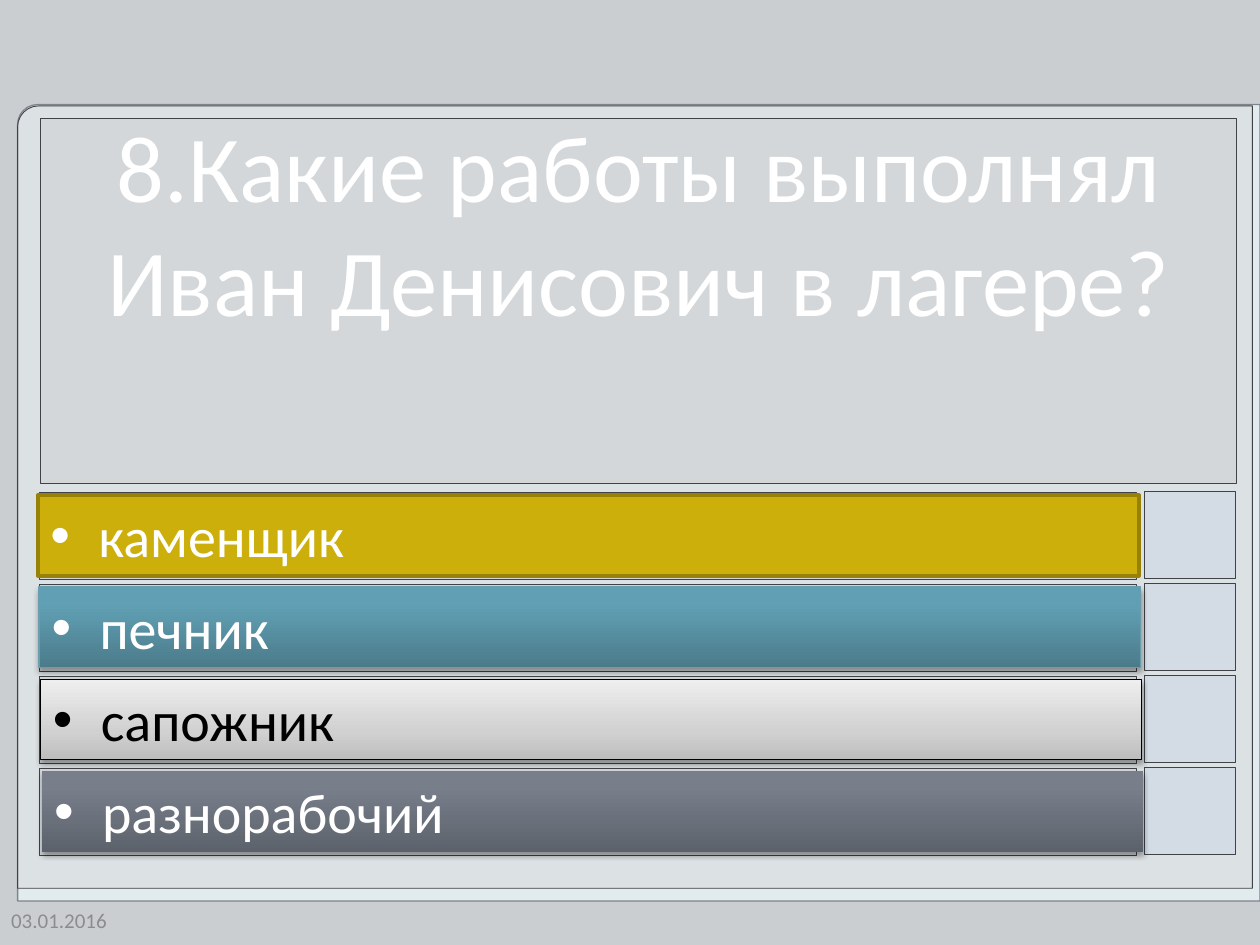
from lxml.etree import SubElement
from pptx import Presentation
from pptx.dml.color import RGBColor as Color
from pptx.enum.shapes import MSO_SHAPE as Form
from pptx.enum.text import MSO_ANCHOR as Anchor, MSO_AUTO_SIZE as Fit, PP_ALIGN as Align
from pptx.oxml.ns import qn
from pptx.util import Inches, Pt

COLORS = {
    "page": "CBCED1", "back": "E2ECEF", "back_edge": "7E848D",
    "card": "D8D8D8", "edge": "3F4247", "mark": "CCD8E7",
    "date": "8C8C8C", "white": "FFFFFF", "black": "000000",
    "gold": "CCAF0A", "gold_edge": "978107", "teal_edge": "6A9DAE",
}
TOP, STEP = 3.93, 0.73
ANSWERS = [
    ("каменщик", "white", "gold_edge", 2, []),
    ("печник", "white", "teal_edge", 0.75, [(0, "4B7B8B"), (80, "61A0B4"), (100, "60A2B7")]),
    ("сапожник", "black", "black", 0.75, [(0, "BDBDBD"), (35, "D1D1D1"), (100, "EEEEEE")]),
    ("разнорабочий", "white", None, 0, [(0, "5C626B"), (80, "787F8B"), (100, "78808C")]),
]


def add_panel(form, area, fill, edge="edge", width=0.5, alpha=50):
    panel = page.shapes.add_shape(form, *map(Inches, area))
    panel.shadow.inherit = False
    panel.fill.solid()
    panel.fill.fore_color.rgb = Color.from_string(COLORS[fill])
    panel.line.color.rgb = Color.from_string(COLORS[edge])
    panel.line.width = Pt(width)
    color = panel._element.spPr.find(qn("a:solidFill"))[0]
    SubElement(color, qn("a:alpha"), val=str(alpha * 1000))
    return panel


def write(box, area, text, size, color, align, anchor):
    for name, value in zip(("left", "top", "width", "height"), area):
        setattr(box, name, Inches(value))
    frame = box.text_frame
    frame.text = text
    for name, value in {"word_wrap": True, "auto_size": Fit.NONE, "vertical_anchor": anchor}.items():
        setattr(frame, name, value)
    para = frame.paragraphs[0]
    para.alignment = align
    font = para.runs[0].font
    for name, value in {"name": "Calibri", "size": Pt(size), "bold": False}.items():
        setattr(font, name, value)
    font.color.rgb = Color.from_string(COLORS[color])
    return para


deck = Presentation()
deck.slide_width, deck.slide_height = Inches(10), Inches(7.5)
page = deck.slides.add_slide(deck.slide_layouts[4])
page.background.fill.solid()
page.background.fill.fore_color.rgb = Color.from_string(COLORS["page"])
title, *bodies = list(page.placeholders)

back = add_panel(Form.SNIP_ROUND_RECTANGLE, (0.14, 0.83, 9.86, 6.32), "back", "back_edge", 0.75, 100)
back.adjustments[0], back.adjustments[1] = 0.025, 0
card = add_panel(Form.ROUND_1_RECTANGLE, (0.14, 0.84, 9.8, 6.21), "card")
card.adjustments[0] = 0.027
card._element.spPr.xfrm.set("flipH", "1")
add_panel(Form.RECTANGLE, (0.32, 0.94, 9.49, 2.9), "page")
for row in range(len(ANSWERS)):
    top = TOP - 0.02 + row * STEP
    add_panel(Form.RECTANGLE, (0.31, top, 8.71, 0.69), "page")
    add_panel(Form.RECTANGLE, (9.08, top - 0.01, 0.73, 0.69), "mark")

date = page.shapes.add_textbox(0, 0, 0, 0)
write(date, (-0.01, 7.1, 1.17, 0.4), "03.01.2016", 12, "date", Align.LEFT, Anchor.MIDDLE)

for row, (box, (text, color, edge, width, stops)) in enumerate(zip(bodies, ANSWERS)):
    page.shapes._spTree.append(box._element)
    area = (0.3 + row * 0.01, TOP + row * STEP, 8.74, 0.64)
    para = write(box, area, text, 32, color, Align.LEFT, Anchor.TOP)
    props = para._p.get_or_add_pPr()
    props.set("marL", str(Inches(0.38)))
    props.set("indent", str(-Inches(0.38)))
    SubElement(props, qn("a:buFont"), typeface="Arial")
    SubElement(props, qn("a:buChar"), char="•")
    if stops:
        box.fill.gradient()
        box.fill.gradient_angle = 90
        stop_list = box._element.spPr.find(".//" + qn("a:gsLst"))
        stop_list.clear()
        for place, value in stops:
            stop = SubElement(stop_list, qn("a:gs"), pos=str(place * 1000))
            SubElement(stop, qn("a:srgbClr"), val=value)
    else:
        box.fill.solid()
        box.fill.fore_color.rgb = Color.from_string(COLORS["gold"])
    if edge:
        box.line.color.rgb = Color.from_string(COLORS[edge])
        box.line.width = Pt(width)
    else:
        box.line.fill.background()
    if stops:
        effects = SubElement(box._element.spPr, qn("a:effectLst"))
        shadow = SubElement(effects, qn("a:outerShdw"), blurRad=str(Pt(3.1)),
                            dist=str(Pt(1.8)), dir="5400000", rotWithShape="0")
        tint = SubElement(shadow, qn("a:srgbClr"), val=COLORS["black"])
        SubElement(tint, qn("a:alpha"), val="35000")

page.shapes._spTree.append(title._element)
write(title, (0.43, 0.81, 9.28, 1.92), "8.Какие работы выполнял Иван Денисович в лагере?",
      54, "white", Align.CENTER, Anchor.TOP)

deck.save("out.pptx")
